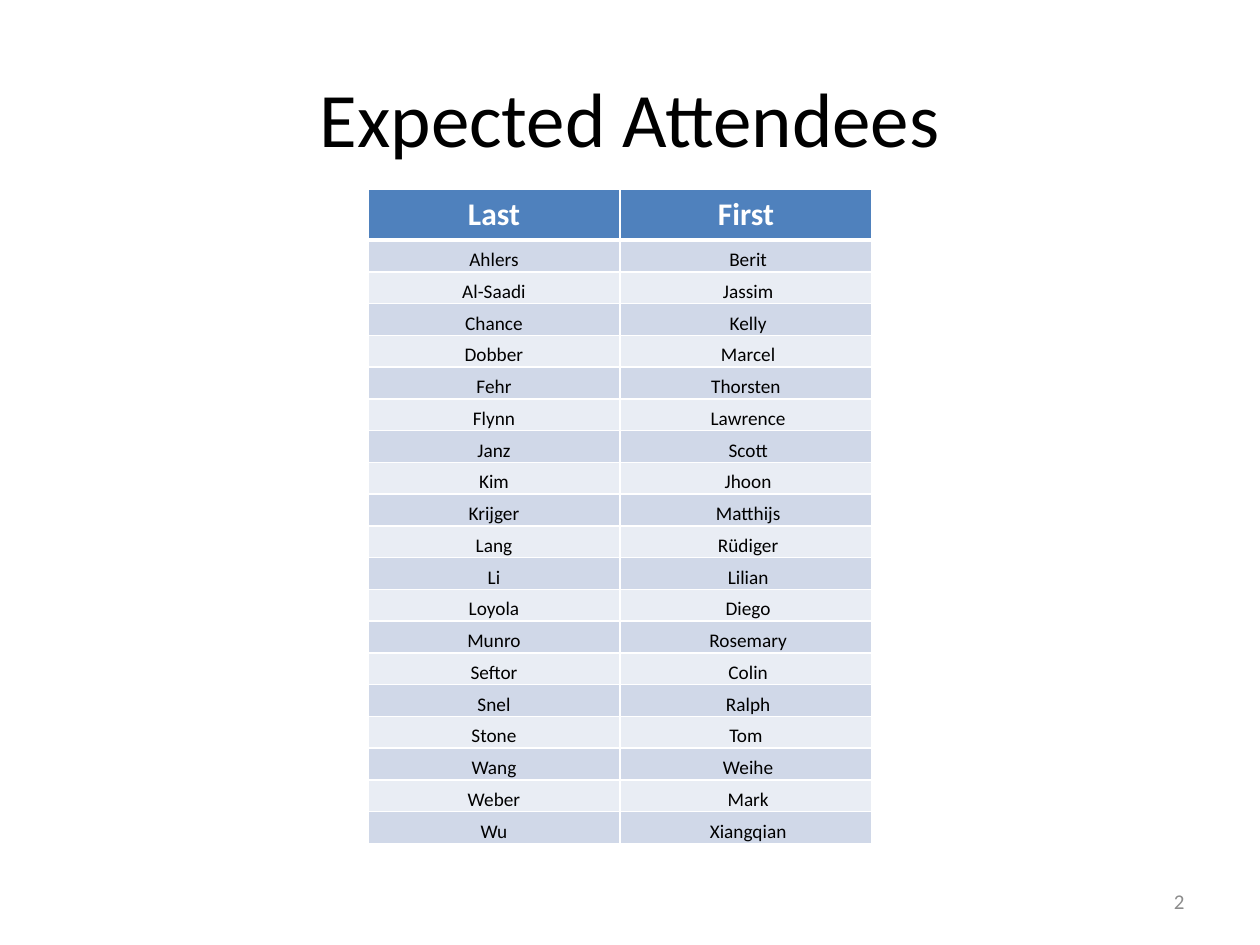
from lxml import etree
from pptx import Presentation, util as u
from pptx.dml.color import RGBColor
from pptx.enum import text
from pptx.oxml import ns

PX = 914400 / 126
COLORS = {
    "black": "000000",
    "white": "FFFFFF",
    "gray": "8C8C8C",
    "header": "4F81BD",
    "odd": "D0D8E8",
    "even": "E9EDF4",
}
ATTENDEES = [
    ("Ahlers", " Berit"),
    ("Al-Saadi", " Jassim"),
    ("Chance", " Kelly"),
    ("Dobber", " Marcel"),
    ("Fehr", "Thorsten"),
    ("Flynn", " Lawrence"),
    ("Janz", " Scott"),
    ("Kim", " Jhoon"),
    ("Krijger", " Matthijs"),
    ("Lang", " Rüdiger"),
    ("Li", " Lilian"),
    ("Loyola", " Diego"),
    ("Munro", " Rosemary"),
    ("Seftor", " Colin"),
    ("Snel", " Ralph"),
    ("Stone", "Tom"),
    ("Wang", " Weihe"),
    ("Weber", " Mark"),
    ("Wu", " Xiangqian"),
]


def px(value):
    return u.Emu(round(value * PX))


def write(frame, words, size, color="black", bold=False, align=text.PP_ALIGN.CENTER):
    paragraph = frame.paragraphs[0]
    paragraph.alignment = align
    run = paragraph.add_run()
    run.text = words
    run.font.name = "Calibri"
    run.font.size = u.Pt(size)
    run.font.bold = bold
    run.font.color.rgb = RGBColor.from_string(COLORS[color])


presentation = Presentation()
presentation.slide_width, presentation.slide_height = px(1260), px(945)
slide = presentation.slides.add_slide(presentation.slide_layouts[5])

title = slide.shapes.title
title.left, title.top, title.width, title.height = px(63), px(38), px(1134), px(157)
title.text_frame.vertical_anchor = text.MSO_ANCHOR.MIDDLE
write(title.text_frame, "Expected Attendees", size=44)

TABLE_HEIGHT, HEADER_HEIGHT = 655, 51
rows = [("Last", "First")] + ATTENDEES
table = slide.shapes.add_table(
    len(rows), 2, px(368), px(189), px(504), px(TABLE_HEIGHT)
).table
for column in table.columns:
    column.width = px(252)

for row_index, names in enumerate(rows):
    is_header = row_index == 0
    body_height = (TABLE_HEIGHT - HEADER_HEIGHT) / len(ATTENDEES)
    table.rows[row_index].height = px(HEADER_HEIGHT if is_header else body_height)
    widths = {
        "lnL": 1,
        "lnR": 1,
        "lnT": 3 if row_index == 1 else 1,
        "lnB": 3 if is_header else 1,
    }
    for column_index, name in enumerate(names):
        cell = table.cell(row_index, column_index)
        if is_header:
            fill = "header"
            write(cell.text_frame, name, size=18, color="white", bold=True)
        else:
            fill = "odd" if row_index % 2 else "even"
            write(cell.text_frame, name, size=11)
            cell.vertical_anchor = text.MSO_ANCHOR.BOTTOM
            cell.margin_left = cell.margin_right = cell.margin_top = px(1)
            cell.margin_bottom = 0
        properties = cell._tc.get_or_add_tcPr()
        for side, width in widths.items():
            line = etree.SubElement(properties, ns.qn(f"a:{side}"), w=str(u.Pt(width)))
            solid = etree.SubElement(line, ns.qn("a:solidFill"))
            etree.SubElement(solid, ns.qn("a:srgbClr"), val=COLORS["white"])
        cell.fill.solid()
        cell.fill.fore_color.rgb = RGBColor.from_string(COLORS[fill])

number_box = slide.shapes.add_textbox(px(903), px(876), px(294), px(50))
number_box.text_frame.word_wrap = True
number_box.text_frame.vertical_anchor = text.MSO_ANCHOR.MIDDLE
write(number_box.text_frame, "2", size=12, color="gray", align=text.PP_ALIGN.RIGHT)

presentation.save("out.pptx")
